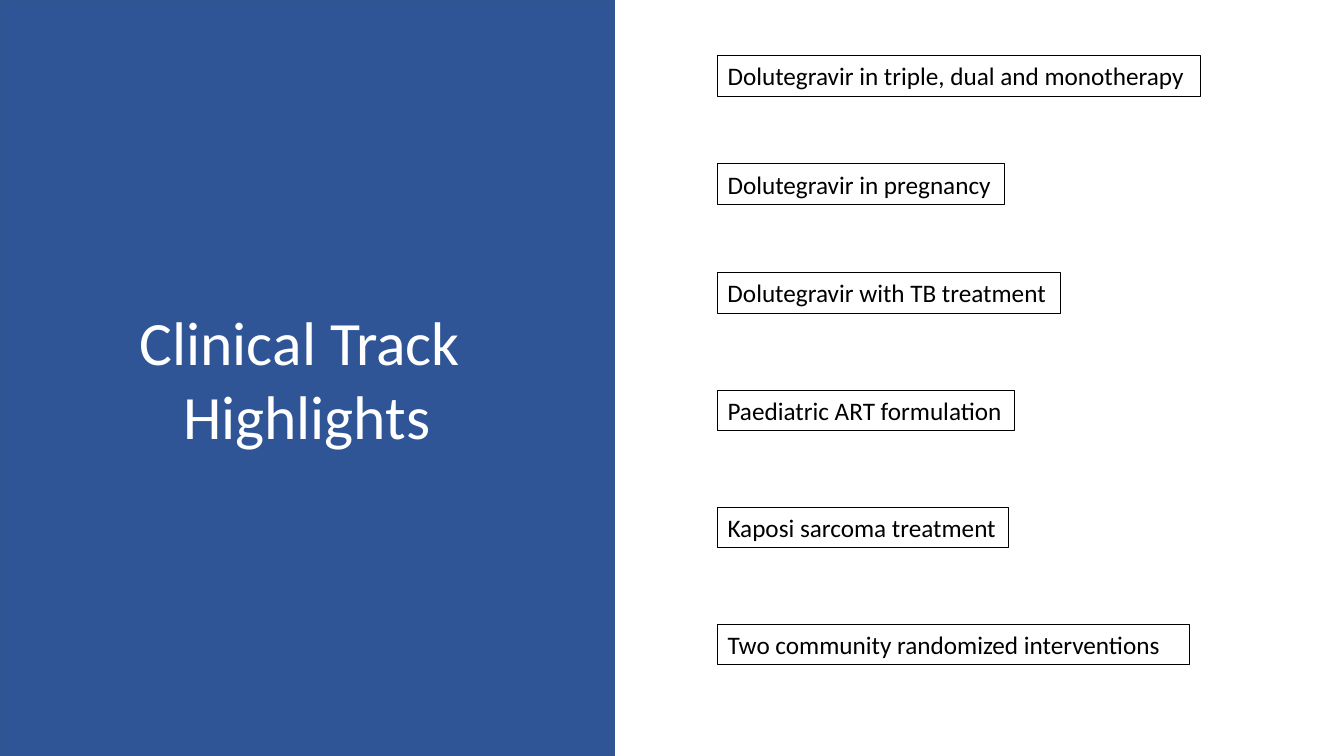
from pptx import Presentation
from pptx.dml.color import RGBColor
from pptx.enum.shapes import MSO_SHAPE as Shape
from pptx.enum.text import MSO_ANCHOR as Anchor, PP_ALIGN as Align
from pptx.util import Pt

# Content
TITLE_LINES = ["Clinical Track ", "Highlights"]
# Two groups: top of first box, step between boxes, (text, box width)
TOPIC_GROUPS = [
    (39.6, 77.5, [
        ("Dolutegravir in triple, dual and monotherapy", 344.9),
        ("Dolutegravir in pregnancy", 205.2),
        ("Dolutegravir with TB treatment", 244.8),
    ]),
    (278.6, 83.6, [
        ("Paediatric ART formulation", 212.4),
        ("Kaposi sarcoma treatment", 208.1),
        ("Two community randomized interventions", 337),
    ]),
]

# Layout and style
SLIDE_WIDTH, SLIDE_HEIGHT = 960, 540
PANEL_WIDTH = 438.5
TOPIC_LEFT, TOPIC_HEIGHT = 512.6, 29.1
FONT = "Calibri"
BLACK, WHITE = "000000", "FFFFFF"
PANEL_FILL, PANEL_LINE = "2F5597", "325491"


def color(value):
    return RGBColor.from_string(value)


def add_box(slide, left, top, width, height, fill, line, line_width):
    shape = slide.shapes.add_shape(
        Shape.RECTANGLE, Pt(left), Pt(top), Pt(width), Pt(height))
    shape.shadow.inherit = False
    if fill:
        shape.fill.solid()
        shape.fill.fore_color.rgb = color(fill)
    else:
        shape.fill.background()
    shape.line.color.rgb = color(line)
    shape.line.width = Pt(line_width)
    return shape


def write(shape, lines, size, text_color, align, anchor):
    frame = shape.text_frame
    frame.word_wrap = True
    frame.vertical_anchor = anchor
    frame.text = "\n".join(lines)
    for paragraph in frame.paragraphs:
        paragraph.alignment = align
        paragraph.font.name = FONT
        paragraph.font.size = Pt(size)
        paragraph.font.color.rgb = color(text_color)


def main():
    presentation = Presentation()
    presentation.slide_width = Pt(SLIDE_WIDTH)
    presentation.slide_height = Pt(SLIDE_HEIGHT)
    slide = presentation.slides.add_slide(presentation.slide_layouts[6])

    # Topic boxes
    for first_top, step, topics in TOPIC_GROUPS:
        for index, (text, width) in enumerate(topics):
            box = add_box(slide, TOPIC_LEFT, first_top + index * step,
                          width, TOPIC_HEIGHT, None, BLACK, 0.75)
            write(box, [text], 18, BLACK, Align.LEFT, Anchor.TOP)

    # Title panel
    panel = add_box(slide, 0, 0, PANEL_WIDTH, SLIDE_HEIGHT,
                    PANEL_FILL, PANEL_LINE, 1)
    write(panel, TITLE_LINES, 44, WHITE, Align.CENTER, Anchor.MIDDLE)

    presentation.save("out.pptx")


if __name__ == "__main__":
    main()
